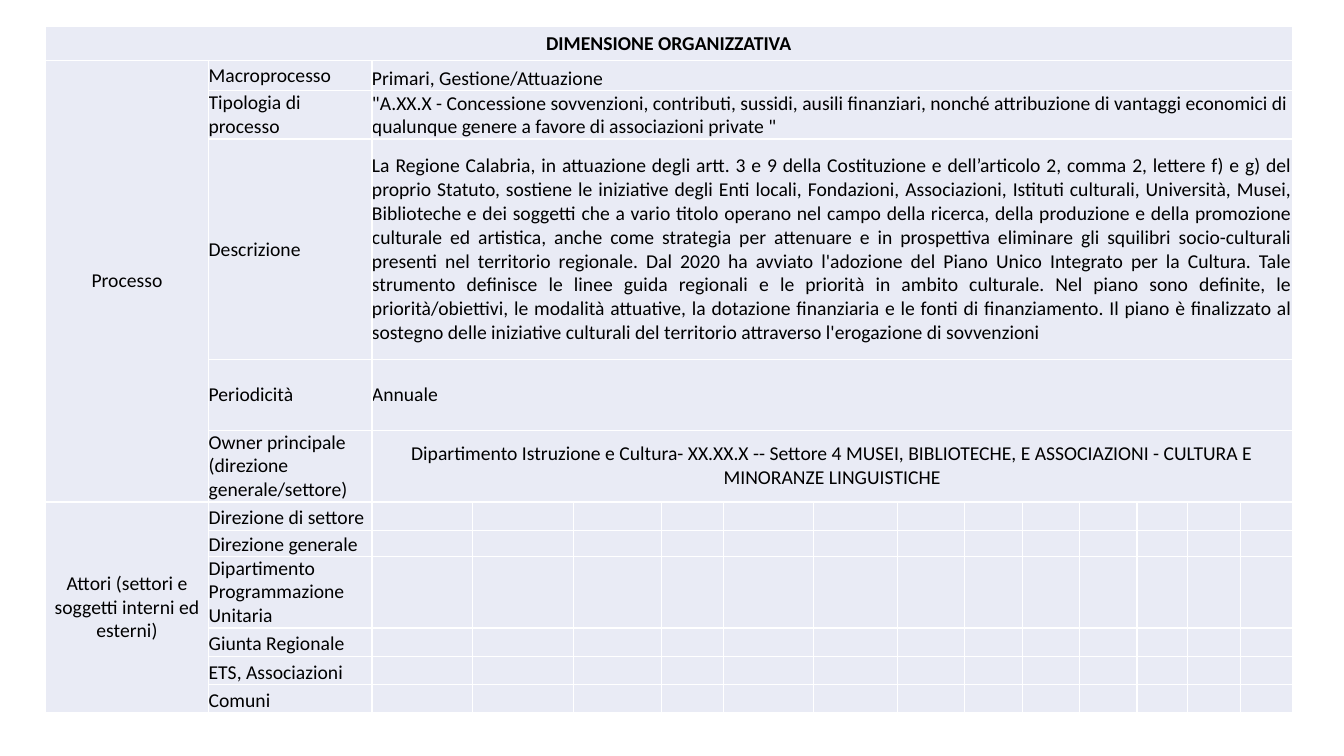
import pptx
import pptx.dml.color
import pptx.enum.text
import pptx.oxml
import pptx.oxml.ns
import pptx.util
from pptx.util import Inches

ALIGN = pptx.enum.text.PP_ALIGN
ANCHOR = pptx.enum.text.MSO_ANCHOR
COLORS = {"cell": "E9EBF5", "border": "FFFFFF", "text": "000000"}
FONT = "Calibri"

COLUMN_WIDTHS = [1.62, 1.62, 1, 1, 0.87, 0.62, 0.89, 0.83, 0.67,
                 0.57, 0.57, 0.57, 0.5, 0.53, 0.51]
ROW_HEIGHTS = [0.34, 0.3, 0.48, 2.19, 0.7, 0.7,
               0.28, 0.26, 0.71, 0.28, 0.28, 0.28]
LAST_COLUMN = len(COLUMN_WIDTHS) - 1

DESCRIPTION_SENTENCES = [
    "La Regione Calabria, in attuazione degli artt. 3 e 9 della Costituzione e "
    "dell’articolo 2, comma 2, lettere f) e g) del proprio Statuto, sostiene le "
    "iniziative degli Enti locali, Fondazioni, Associazioni, Istituti culturali, "
    "Università, Musei, Biblioteche e dei soggetti che a vario titolo operano nel "
    "campo della ricerca, della produzione e della promozione culturale ed "
    "artistica, anche come strategia per attenuare e in prospettiva eliminare gli "
    "squilibri socio-culturali presenti nel territorio regionale.",
    "Dal 2020 ha avviato l'adozione del Piano Unico Integrato per la Cultura.",
    "Tale strumento definisce le linee guida regionali e le priorità in ambito "
    "culturale.",
    "Nel piano sono definite, le priorità/obiettivi, le modalità attuative, la "
    "dotazione finanziaria e le fonti di finanziamento.",
    "Il piano è finalizzato al sostegno delle iniziative culturali del territorio "
    "attraverso l'erogazione di sovvenzioni",
]

# Label, value and the value's format
PROCESS = [
    ("Macroprocesso", "Primari, Gestione/Attuazione", {"anchor": ANCHOR.BOTTOM}),
    ("Tipologia di processo",
     '"A.XX.X - Concessione sovvenzioni, contributi, sussidi, ausili finanziari, '
     "nonché attribuzione di vantaggi economici di qualunque genere a favore di "
     'associazioni private "', {"anchor": ANCHOR.BOTTOM}),
    ("Descrizione", " ".join(DESCRIPTION_SENTENCES), {"align": ALIGN.JUSTIFY}),
    ("Periodicità", "Annuale", {}),
    ("Owner principale (direzione generale/settore)",
     "Dipartimento Istruzione e Cultura- XX.XX.X -- Settore 4 MUSEI, BIBLIOTECHE, E "
     "ASSOCIAZIONI - CULTURA E MINORANZE LINGUISTICHE", {"align": ALIGN.CENTER}),
]
ACTORS = ["Direzione di settore", "Direzione generale",
          "Dipartimento Programmazione Unitaria", "Giunta Regionale",
          "ETS, Associazioni", "Comuni"]


def write_text(cell, text, align=ALIGN.LEFT, anchor=ANCHOR.MIDDLE, bold=False):
    cell.vertical_anchor = anchor
    paragraph = cell.text_frame.paragraphs[0]
    paragraph.alignment = align
    run = paragraph.add_run()
    run.text = text
    run.font.name = FONT
    run.font.size = pptx.util.Pt(14)
    run.font.bold = bold
    run.font.color.rgb = pptx.dml.color.RGBColor.from_string(COLORS["text"])


def style_cell(cell):
    cell.margin_left = cell.margin_right = cell.margin_top = cell.margin_bottom = 0
    # A small size keeps empty cells from stretching their rows
    cell.text_frame.paragraphs[0].font.size = pptx.util.Pt(10)
    properties = cell._tc.get_or_add_tcPr()
    for side in ("lnL", "lnR", "lnT", "lnB"):
        properties.append(pptx.oxml.parse_xml(
            f'<a:{side} {pptx.oxml.ns.nsdecls("a")} w="12700"><a:solidFill>'
            f'<a:srgbClr val="{COLORS["border"]}"/></a:solidFill></a:{side}>'))
    cell.fill.solid()
    cell.fill.fore_color.rgb = pptx.dml.color.RGBColor.from_string(COLORS["cell"])


def add_grid(slide):
    grid = slide.shapes.add_table(
        len(ROW_HEIGHTS), len(COLUMN_WIDTHS), Inches(0.45), Inches(0.26),
        Inches(sum(COLUMN_WIDTHS)), Inches(sum(ROW_HEIGHTS))).table
    grid.first_row = grid.horz_banding = False
    for column, width in zip(grid.columns, COLUMN_WIDTHS):
        column.width = Inches(width)
    for row, height in zip(grid.rows, ROW_HEIGHTS):
        row.height = Inches(height)
    for cell in grid.iter_cells():
        style_cell(cell)
    return grid


def merge_cells(grid, top, left, bottom, right):
    cell = grid.cell(top, left)
    cell.merge(grid.cell(bottom, right))
    return cell


def main():
    presentation = pptx.Presentation()
    presentation.slide_width = Inches(13.33)
    presentation.slide_height = Inches(7.5)
    slide = presentation.slides.add_slide(presentation.slide_layouts[6])
    grid = add_grid(slide)

    # Heading
    write_text(merge_cells(grid, 0, 0, 0, LAST_COLUMN), "DIMENSIONE ORGANIZZATIVA",
               align=ALIGN.CENTER, bold=True)

    # Process
    first_actor = 1 + len(PROCESS)
    write_text(merge_cells(grid, 1, 0, first_actor - 1, 0), "Processo",
               align=ALIGN.CENTER)
    for row, (label, value, value_format) in enumerate(PROCESS, start=1):
        write_text(grid.cell(row, 1), label)
        write_text(merge_cells(grid, row, 2, row, LAST_COLUMN), value, **value_format)

    # Actors
    write_text(merge_cells(grid, first_actor, 0, len(ROW_HEIGHTS) - 1, 0),
               "Attori (settori e soggetti interni ed esterni)", align=ALIGN.CENTER)
    for row, actor in enumerate(ACTORS, start=first_actor):
        write_text(grid.cell(row, 1), actor, anchor=ANCHOR.BOTTOM)

    presentation.save("out.pptx")


if __name__ == "__main__":
    main()
